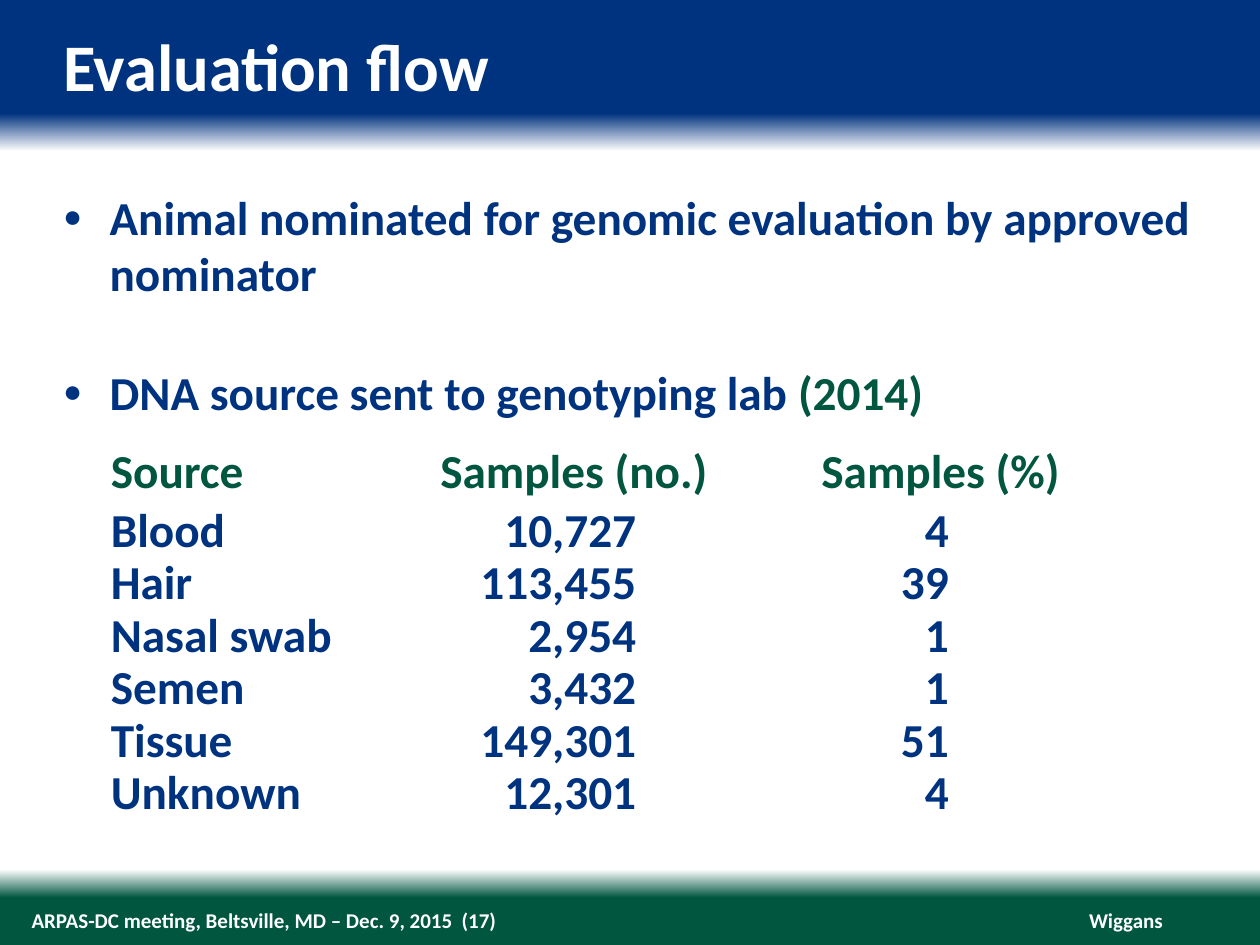
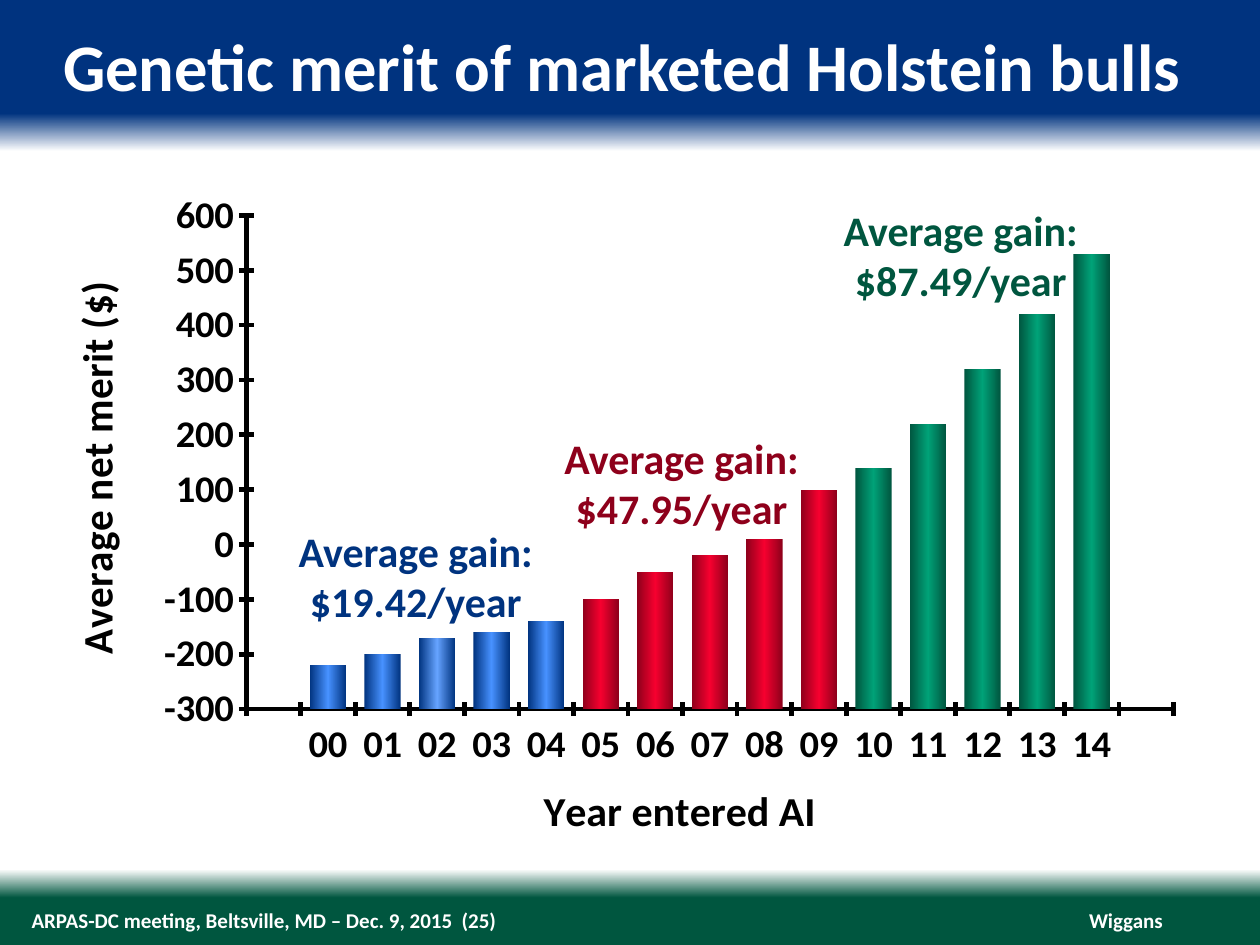
"""Build two slides on genomic evaluation: a sample table and a chart of genetic merit."""
import lxml.etree
import pptx
import pptx.chart.data
import pptx.dml.color
import pptx.enum.chart
import pptx.enum.text
import pptx.oxml.ns
import pptx.util

Inches = pptx.util.Inches
Pt = pptx.util.Pt
hue = pptx.dml.color.RGBColor.from_string
qn = pptx.oxml.ns.qn
Sub = lxml.etree.SubElement
Align = pptx.enum.text.PP_ALIGN
Anchor = pptx.enum.text.MSO_ANCHOR
Tick = pptx.enum.chart.XL_TICK_MARK

BLUE, GREEN, RED, WHITE, BLACK = "00337F", "00563F", "8E001B", "FFFFFF", "000000"
FLUSH = dict(margin_left=0, margin_right=0, margin_top=0, margin_bottom=0, word_wrap=True,
             auto_size=pptx.enum.text.MSO_AUTO_SIZE.NONE)


def style(font, size, color):
    """Set the shared typeface at a size and colour."""
    for key, value in dict(name="Calibri", bold=True, size=Pt(size)).items():
        setattr(font, key, value)
    font.color.rgb = hue(color)


def shade(fill, root, stops, angle):
    """Give the newest gradient under root its own stops."""
    fill.gradient()
    fill.gradient_angle = angle
    ramp = root.findall(".//" + qn("a:gsLst"))[-1]
    for old in list(ramp):
        ramp.remove(old)
    for pos, color in stops:
        stop = Sub(ramp, qn("a:gs"), pos=str(pos * 1000))
        Sub(stop, qn("a:srgbClr"), val=color)


deck = pptx.Presentation()
deck.slide_width, deck.slide_height = Inches(10), Inches(7.5)
master = deck.slide_master
shade(master.background.fill, master.element,
      [(0, BLUE), (12, BLUE), (16, WHITE), (92, WHITE), (95, GREEN), (100, GREEN)], 270)

slides = []
for layout, page, title in ((1, 17, "Evaluation flow"),
                            (5, 25, "Genetic merit of marketed Holstein bulls")):
    slide = deck.slides.add_slide(deck.slide_layouts[layout])
    slides.append(slide)
    head = slide.shapes.title
    head.left, head.top, head.width, head.height = map(Inches, (0.5, 0.2, 9, 0.64))
    meet = slide.shapes.add_textbox(Inches(0.25), Inches(7.2), Inches(5.22), Inches(0.2))
    name = slide.shapes.add_textbox(Inches(8.23), Inches(7.2), Inches(1), Inches(0.2))
    for box, text, size, align, anchor in (
            (head, title, 38, Align.LEFT, Anchor.TOP),
            (meet, f"ARPAS-DC meeting, Beltsville, MD – Dec. 9, 2015  ({page})", 12,
             Align.LEFT, Anchor.MIDDLE),
            (name, "Wiggans", 12, Align.RIGHT, Anchor.MIDDLE)):
        frame = box.text_frame
        for key, value in FLUSH.items():
            setattr(frame, key, value)
        frame.vertical_anchor = anchor
        frame.text = text
        frame.paragraphs[0].alignment = align
        style(frame.paragraphs[0].runs[0].font, size, WHITE)

flow, merit = slides

body = flow.placeholders[1]
body.left, body.top, body.width, body.height = map(Inches, (0.5, 1.5, 9, 1.85))
frame = body.text_frame
for key, value in FLUSH.items():
    setattr(frame, key, value)
points = (
    [("Animal nominated for genomic evaluation by approved nominator", BLUE)],
    [("DNA source sent to genotyping lab ", BLUE), ("(2014)", GREEN)],
)
for i, runs in enumerate(points):
    para = frame.add_paragraph() if i else frame.paragraphs[0]
    for key, value in dict(line_spacing=Pt(32), space_before=Pt(0), space_after=Pt(36)).items():
        setattr(para, key, value)
    props = para._p.get_or_add_pPr()
    props.set("marL", str(Inches(0.37)))
    props.set("indent", str(Inches(-0.37)))
    Sub(Sub(props, qn("a:buClr")), qn("a:srgbClr"), val=BLUE)
    Sub(props, qn("a:buSzPct"), val="67000")
    Sub(props, qn("a:buChar"), char="●")
    for text, color in runs:
        run = para.add_run()
        run.text = text
        style(run.font, 27, color)

rows = (
    ("Source", "Samples (no.)", "Samples (%)"),
    ("Blood", "10,727", "4"),
    ("Hair", "113,455", "39"),
    ("Nasal swab", "2,954", "1"),
    ("Semen", "3,432", "1"),
    ("Tissue", "149,301", "51"),
    ("Unknown", "12,301", "4"),
)
table = flow.shapes.add_table(len(rows), 3, Inches(0.81), Inches(3.56),
                              Inches(8.02), Inches(2.8)).table
table.first_row = table.horz_banding = False
for col, width in zip(table.columns, (2.2, 3.09, 2.73)):
    col.width = Inches(width)
for r, row in enumerate(rows):
    table.rows[r].height = Inches(0.4)
    for c, text in enumerate(row):
        cell = table.cell(r, c)
        cell.fill.background()
        cell.vertical_anchor = Anchor.BOTTOM
        cell.margin_left = Inches(0.07)
        cell.margin_right = Inches((0.07, 1.05, 1.3)[c] if r else 0.07)
        cell.margin_top = Inches(0.05 if (r, c) == (1, 0) else 0)
        cell.margin_bottom = 0
        cell.text = text
        para = cell.text_frame.paragraphs[0]
        para.line_spacing = Pt(30)
        if c:
            para.alignment = Align.RIGHT if r else Align.CENTER
        style(para.runs[0].font, 27, BLUE if r else GREEN)

data = pptx.chart.data.CategoryChartData()
data.categories = ["", *(f"{year:02d}" for year in range(15)), ""]
data.add_series("Series 1", [None, -220, -200, -170, -160, -140, -100, -50, -20, 10,
                             100, 140, 220, 320, 420, 530, None])
chart = merit.shapes.add_chart(pptx.enum.chart.XL_CHART_TYPE.COLUMN_CLUSTERED, Inches(0.39),
                               Inches(1.34), Inches(9.2), Inches(5.41), data).chart
chart.has_title = chart.has_legend = False
style(chart.font, 20, BLACK)
plot = chart.plots[0]
plot.gap_width = 50
plot.vary_by_categories = False
bars = plot.series[0]
bars.invert_if_negative = False
for i in range(1, 16):
    edge, core = ((BLUE, "4791FF"), (RED, "F6002F"), (GREEN, "00A278"))[(i - 1) // 5]
    if i == 3:
        core = "65A3FF"
    shade(bars.points[i].format.fill, chart.element, [(0, edge), (50, core), (100, edge)], 0)

years, worth = chart.category_axis, chart.value_axis
for axis, text in ((years, "Year entered AI"), (worth, "Average net merit ($)")):
    axis.has_major_gridlines = False
    axis.major_tick_mark = Tick.CROSS
    axis.minor_tick_mark = Tick.NONE
    axis.tick_label_position = pptx.enum.chart.XL_TICK_LABEL_POSITION.LOW
    axis.format.line.color.rgb = hue(BLACK)
    axis.format.line.width = Pt(2.75)
    style(axis.tick_labels.font, 22, BLACK)
    frame = axis.axis_title.text_frame
    frame.text = text
    style(frame.paragraphs[0].runs[0].font, 24, BLACK)
for key, value in dict(minimum_scale=-300, maximum_scale=600, major_unit=100,
                       crosses=pptx.enum.chart.XL_AXIS_CROSSES.MINIMUM).items():
    setattr(worth, key, value)
turn = worth.axis_title.element.find(".//" + qn("a:bodyPr"))
turn.set("rot", "-5400000")
turn.set("vert", "horz")

area = chart.element.find(".//" + qn("c:plotArea"))
if area.find(qn("c:layout")) is None:
    area.insert(0, area.makeelement(qn("c:layout")))
for node, spot in ((area, dict(x=0.17, y=0.07, w=0.8, h=0.74)),
                   (years.axis_title.element, dict(x=0.42, y=0.91)),
                   (worth.axis_title.element, dict(x=0.01, y=0.17))):
    place = Sub(node.find(qn("c:layout")), qn("c:manualLayout"))
    if node is area:
        Sub(place, qn("c:layoutTarget"), val="inner")
    for key in "xy":
        Sub(place, qn(f"c:{key}Mode"), val="edge")
    for key, value in spot.items():
        Sub(place, qn(f"c:{key}"), val=str(value))

for left, top, width, gain, color in ((2.25, 4.12, 2.1, "$19.42/year", BLUE),
                                      (4.28, 3.38, 2.26, "$47.95/year", RED),
                                      (6.52, 1.57, 2.21, "$87.49/year", GREEN)):
    note = merit.shapes.add_textbox(Inches(left), Inches(top), Inches(width), Inches(0.91))
    frame = note.text_frame
    frame.word_wrap = True
    frame.text = f"Average gain:\n{gain}"
    for para in frame.paragraphs:
        para.alignment = Align.CENTER
        style(para.runs[0].font, 24, color)

deck.save("out.pptx")
